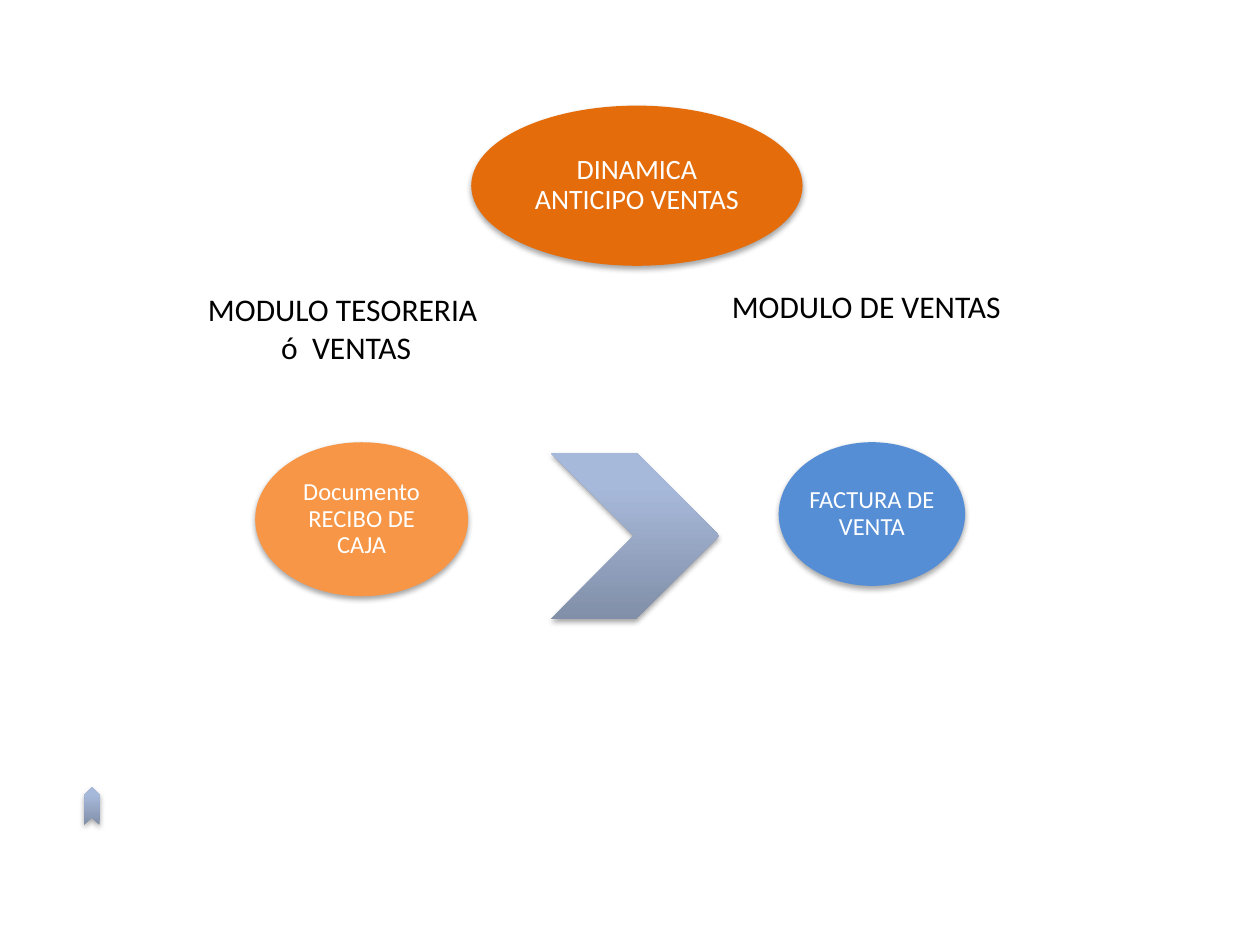
from dataclasses import dataclass

from lxml.etree import SubElement
from pptx import Presentation
from pptx.dml.color import RGBColor
from pptx.enum.shapes import MSO_SHAPE as Form
from pptx.enum.text import MSO_ANCHOR as Anchor, MSO_AUTO_SIZE as Fit, PP_ALIGN as Align
from pptx.oxml.ns import qn
from pptx.util import Inches, Pt

WIDE, HIGH = 10, 7.5


@dataclass(frozen=True)
class Theme:
    font: str = "Calibri"
    white: str = "FFFFFF"
    black: str = "000000"
    dark: str = "E46C0A"
    light: str = "F79646"
    blue: str = "558ED5"
    steel: tuple = ((0, "818FA8"), (80, "A7B9DA"), (100, "A7BADC"))
    title: int = 16
    step: int = 14
    label: int = 18


@dataclass(frozen=True)
class Box:
    """Centre and size, as percentages of the slide."""
    x: float
    y: float
    w: float
    h: float

    def frame(self) -> tuple:
        left, top = self.x - self.w / 2, self.y - self.h / 2
        return (Inches(left * WIDE / 100), Inches(top * HIGH / 100),
                Inches(self.w * WIDE / 100), Inches(self.h * HIGH / 100))


@dataclass(frozen=True)
class Oval:
    box: Box
    text: str
    fill: str
    size: int


@dataclass(frozen=True)
class Arrow:
    box: Box
    turn: float


@dataclass(frozen=True)
class Label:
    box: Box
    text: str
    align: Align


THEME = Theme()
OVALS = (
    Oval(Box(50.55, 19.65, 26.3, 16.95), "DINAMICA ANTICIPO VENTAS", THEME.dark, THEME.title),
    Oval(Box(28.7, 54.95, 16.9, 16.3), "Documento RECIBO DE CAJA", THEME.light, THEME.step),
    Oval(Box(69.2, 54.4, 14.8, 15.2), "FACTURA DE VENTA", THEME.blue, THEME.step),
)
ARROWS = (
    Arrow(Box(50.4, 56.7, 13.4, 17.6), 0),
    Arrow(Box(7.3, 85.3, 3, 1.6), 270.6),
)
LABELS = (
    Label(Box(27.2, 34.7, 23.6, 9.4), "MODULO TESORERIA\n ó  VENTAS", Align.CENTER),
    Label(Box(69.2, 32.4, 24.2, 5.4), "MODULO DE VENTAS", Align.LEFT),
)


def style(frame, size: int, color: str, align: Align) -> None:
    for para in frame.paragraphs:
        para.alignment = align
        for run in para.runs:
            run.font.name = THEME.font
            run.font.size = Pt(size)
            run.font.color.rgb = RGBColor.from_string(color)


def tint(node, color: str):
    return SubElement(node, qn("a:srgbClr"), val=color)


def shade(shape) -> None:
    """Drop a soft shadow straight down."""
    shape.shadow.inherit = False
    effects = shape._element.spPr.find(qn("a:effectLst"))
    drop = SubElement(effects, qn("a:outerShdw"), blurRad="40000", dist="23000",
                      dir="5400000", rotWithShape="0")
    SubElement(tint(drop, THEME.black), qn("a:alpha"), val="35000")


def blend(shape) -> None:
    """Fill from dark at the foot to light at the top, however the shape is turned."""
    shape.fill.gradient()
    grad = shape._element.spPr.find(qn("a:gradFill"))
    grad.set("rotWithShape", "0")
    stops = grad.find(qn("a:gsLst"))
    for stop in list(stops):
        stops.remove(stop)
    for pos, color in THEME.steel:
        tint(SubElement(stops, qn("a:gs"), pos=str(pos * 1000)), color)
    shape.fill.gradient_angle = 90


def draw_oval(shapes, oval: Oval) -> None:
    shape = shapes.add_shape(Form.OVAL, *oval.box.frame())
    shape.fill.solid()
    shape.fill.fore_color.rgb = RGBColor.from_string(oval.fill)
    shape.line.fill.background()
    shade(shape)
    frame = shape.text_frame
    frame.text = oval.text
    frame.word_wrap = True
    frame.vertical_anchor = Anchor.MIDDLE
    frame.margin_left = frame.margin_right = Inches(0.02)
    frame.margin_top = frame.margin_bottom = Inches(0.02)
    frame.paragraphs[0].line_spacing = 0.9
    style(frame, oval.size, THEME.white, Align.CENTER)


def draw_arrow(shapes, arrow: Arrow) -> None:
    shape = shapes.add_shape(Form.CHEVRON, *arrow.box.frame())
    shape.rotation = arrow.turn
    shape.line.fill.background()
    blend(shape)
    shade(shape)


def draw_label(shapes, label: Label) -> None:
    frame = shapes.add_textbox(*label.box.frame()).text_frame
    frame.text = label.text
    frame.word_wrap = False
    frame.auto_size = Fit.SHAPE_TO_FIT_TEXT
    style(frame, THEME.label, THEME.black, label.align)


def main() -> None:
    deck = Presentation()
    deck.slide_width, deck.slide_height = Inches(WIDE), Inches(HIGH)
    shapes = deck.slides.add_slide(deck.slide_layouts[6]).shapes
    for draw, items in ((draw_oval, OVALS), (draw_arrow, ARROWS), (draw_label, LABELS)):
        for item in items:
            draw(shapes, item)
    deck.save("out.pptx")


if __name__ == "__main__":
    main()
